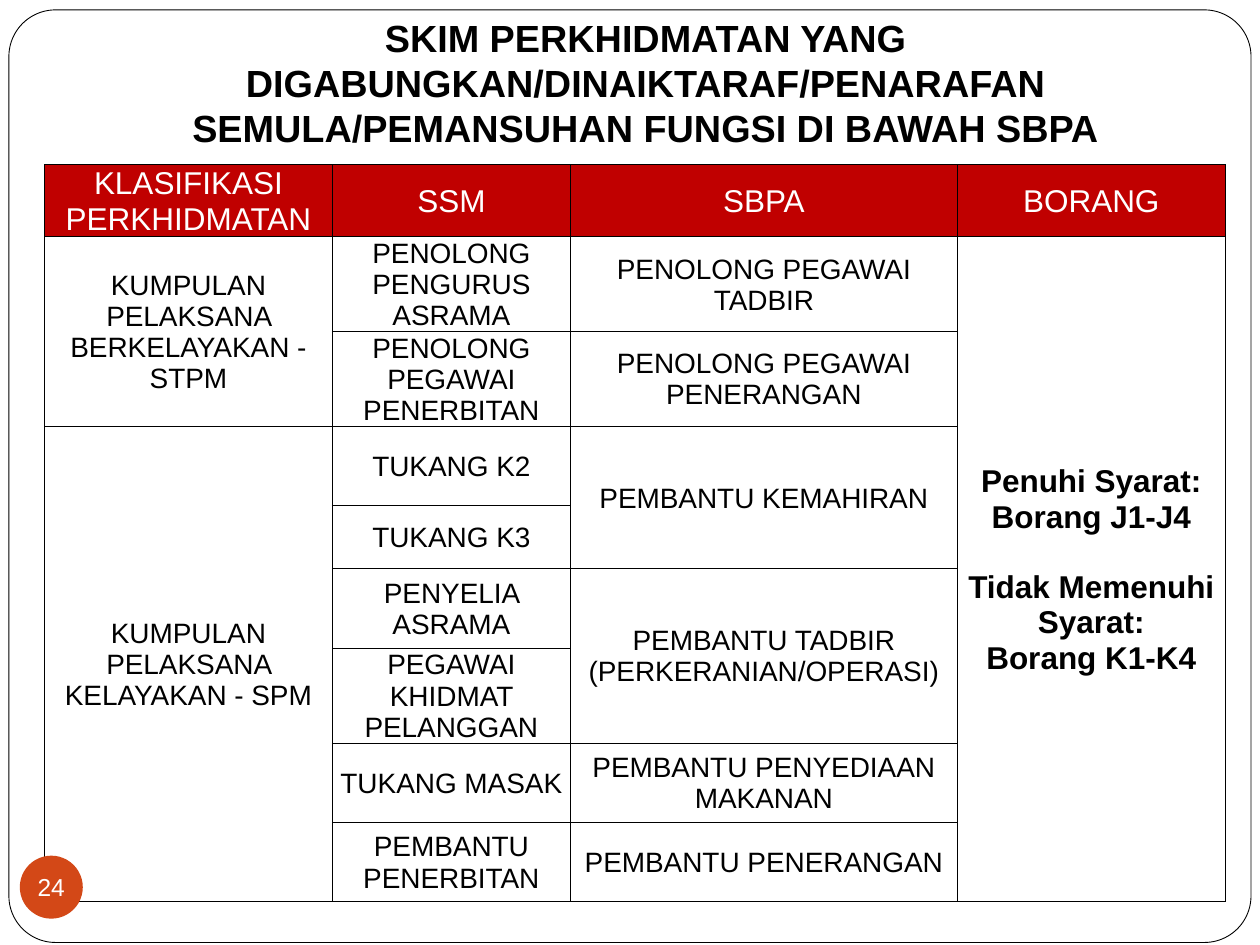
import pptx
import pptx.dml.color
import pptx.enum.shapes
import pptx.enum.text
import pptx.oxml
import pptx.oxml.ns
import pptx.util

Cm = pptx.util.Cm
Pt = pptx.util.Pt
ALIGN = pptx.enum.text.PP_ALIGN
ANCHOR = pptx.enum.text.MSO_ANCHOR
SHAPE = pptx.enum.shapes.MSO_SHAPE

TITLE = ("SKIM PERKHIDMATAN YANG DIGABUNGKAN/DINAIKTARAF/PENARAFAN "
         "SEMULA/PEMANSUHAN FUNGSI DI BAWAH SBPA")
BORANG = ("Penuhi Syarat: Borang J1-J4\n"
          "Tidak Memenuhi Syarat:\nBorang K1-K4")
# None continues the cell above it
ROWS = [
    ("KLASIFIKASI PERKHIDMATAN", "SSM", "SBPA", "BORANG"),
    ("KUMPULAN PELAKSANA BERKELAYAKAN - STPM",
     "PENOLONG PENGURUS ASRAMA", "PENOLONG PEGAWAI TADBIR", BORANG),
    (None, "PENOLONG PEGAWAI PENERBITAN", "PENOLONG PEGAWAI PENERANGAN", None),
    ("KUMPULAN PELAKSANA KELAYAKAN - SPM",
     "TUKANG K2", "PEMBANTU KEMAHIRAN", None),
    (None, "TUKANG K3", None, None),
    (None, "PENYELIA ASRAMA", "PEMBANTU TADBIR (PERKERANIAN/OPERASI)", None),
    (None, "PEGAWAI KHIDMAT PELANGGAN", None, None),
    (None, "TUKANG MASAK", "PEMBANTU PENYEDIAAN MAKANAN", None),
    (None, "PEMBANTU PENERBITAN", "PEMBANTU PENERANGAN", None),
]
WIDTHS = [5.8, 4.8, 7.8, 5.4]
HEIGHTS = [1.2, 1.6, 1.6, 1.6, 1.27, 1.6, 1.6, 1.6, 1.6]


def paint(part, color):
    part.solid()
    part.fore_color.rgb = pptx.dml.color.RGBColor.from_string(color)


def write(frame, text, size, color="000000", bold=False):
    frame.text = text
    for para in frame.paragraphs:
        para.alignment = ALIGN.CENTER
        for run in para.runs:
            run.font.name = "Arial"
            run.font.size = Pt(size)
            run.font.bold = bold
            paint(run.font.fill, color)


def inset(frame, left, top, right, bottom):
    frame.margin_left, frame.margin_top = Cm(left), Cm(top)
    frame.margin_right, frame.margin_bottom = Cm(right), Cm(bottom)


def edge(cell):
    """Draw a thin black line on all four sides of a cell."""
    props = cell._tc.get_or_add_tcPr()
    for spot, side in enumerate("LRTB"):
        props.insert(spot, pptx.oxml.parse_xml(
            f'<a:ln{side} {pptx.oxml.ns.nsdecls("a")} w="{Pt(0.5)}">'
            '<a:solidFill><a:srgbClr val="000000"/></a:solidFill>'
            f'</a:ln{side}>'))


def add_shape(slide, kind, box, fill):
    shape = slide.shapes.add_shape(kind, *map(Cm, box))
    shape.shadow.inherit = False
    paint(shape.fill, fill)
    return shape


def add_frame(slide):
    frame = add_shape(slide, SHAPE.ROUNDED_RECTANGLE,
                      (0.18, 0.2, 25.04, 18.8), "FFFFFF")
    frame.adjustments[0] = 0.05
    paint(frame.line.fill, "000000")
    frame.line.width = Pt(0.5)
    # behind the title placeholder
    slide.shapes._spTree.insert(2, frame._element)


def add_title(slide):
    title = slide.shapes.title
    title.left, title.top = Cm(1.9), Cm(1.73)
    title.width, title.height = Cm(22.23), Cm(1.55)
    frame = title.text_frame
    frame.word_wrap = True
    frame.auto_size = pptx.enum.text.MSO_AUTO_SIZE.NONE
    frame.vertical_anchor = ANCHOR.BOTTOM
    inset(frame, 0.25, 0.13, 0.25, 0.25)
    write(frame, TITLE, 21.6, bold=True)


def add_grid(slide):
    grid = slide.shapes.add_table(
        len(ROWS), len(WIDTHS), Cm(0.9), Cm(3.32),
        Cm(sum(WIDTHS)), Cm(sum(HEIGHTS))).table
    for col, width in zip(grid.columns, WIDTHS):
        col.width = Cm(width)
    for row, height in zip(grid.rows, HEIGHTS):
        row.height = Cm(height)
    for y, row in enumerate(ROWS):
        for x, text in enumerate(row):
            cell = grid.cell(y, x)
            head = y == 0
            if head:
                paint(cell.fill, "C00000")
            else:
                cell.fill.background()
            edge(cell)
            if text is None:
                continue
            last = y
            while last + 1 < len(ROWS) and ROWS[last + 1][x] is None:
                last += 1
            if last > y:
                cell.merge(grid.cell(last, x))
            cell.vertical_anchor = ANCHOR.MIDDLE
            inset(cell, 0.03, 0.03, 0.03, 0)
            form = text == BORANG
            write(cell.text_frame, text, 18 if head or form else 16,
                  "FFFFFF" if head else "000000", form)
            if form:
                cell.text_frame.paragraphs[1].space_before = Pt(20)


def add_number(slide):
    disc = add_shape(slide, SHAPE.OVAL, (0.4, 17.25, 1.27, 1.27), "D34817")
    disc.line.fill.background()
    frame = disc.text_frame
    frame.word_wrap = False
    frame.vertical_anchor = ANCHOR.MIDDLE
    inset(frame, 0, 0, 0, 0)
    write(frame, "24", 14, "FFFFFF")


def main():
    deck = pptx.Presentation()
    deck.slide_width, deck.slide_height = Cm(25.4), Cm(19.05)
    slide = deck.slides.add_slide(deck.slide_layouts[5])
    add_frame(slide)
    add_title(slide)
    add_grid(slide)
    add_number(slide)
    deck.save("out.pptx")


if __name__ == "__main__":
    main()
